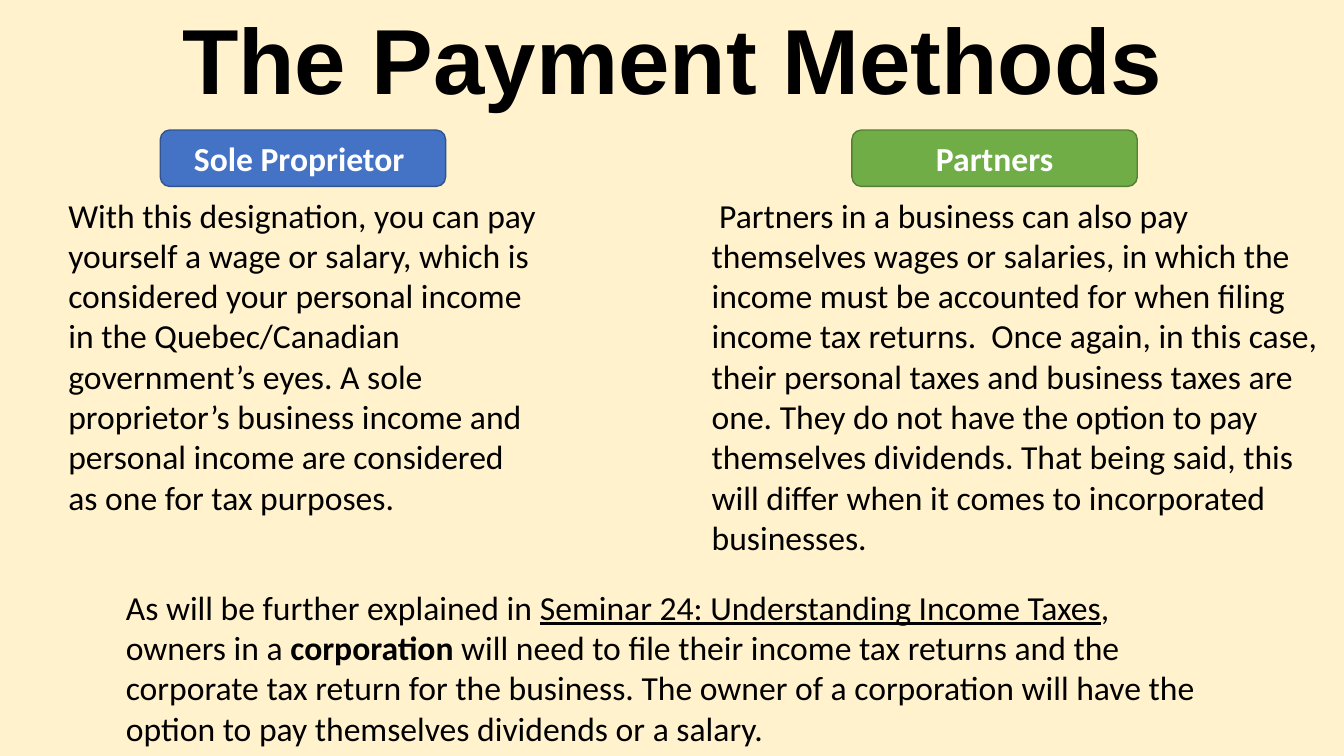
from pptx import Presentation
from pptx.dml.color import RGBColor
from pptx.enum.shapes import MSO_SHAPE
from pptx.enum.text import MSO_ANCHOR, PP_ALIGN
from pptx.util import Inches, Pt

SOLE = (
    "With this designation, you can pay yourself a wage or salary, which is "
    "considered your personal income in the Quebec/Canadian government’s eyes. "
    "A sole proprietor’s business income and personal income are considered as "
    "one for tax purposes."
)
PARTNERS = (
    "Partners in a business can also pay themselves wages or salaries, in which "
    "the income must be accounted for when filing income tax returns.  Once "
    "again, in this case, their personal taxes and business taxes are one. They "
    "do not have the option to pay themselves dividends. That being said, this "
    "will differ when it comes to incorporated businesses."
)
# Each run is its text and its style: "b" bold, "u" underlined
CORP = [
    ("As will be further explained in ", ""),
    ("Seminar 24: Understanding Income Taxes", "u"),
    (", owners in a ", ""),
    ("corporation", "b"),
    (" will need to file their income tax returns and the corporate tax return "
     "for the business. The owner of a corporation will have the option to pay "
     "themselves dividends or a salary.", ""),
]


def paint(color, code):
    color.rgb = RGBColor.from_string(code)


def style(para, size=24, name="Calibri", code="000000", bold=None):
    font = para.font
    font.size, font.name, font.bold = Pt(size), name, bold
    paint(font.color, code)


def add_title(slide, text):
    title = slide.shapes.title
    title.left, title.top = Inches(0.92), Inches(-0.08)
    title.width, title.height = Inches(11.5), Inches(1.45)
    frame = title.text_frame
    frame.text = text
    frame.vertical_anchor = MSO_ANCHOR.MIDDLE
    para = frame.paragraphs[0]
    para.alignment, para.line_spacing = PP_ALIGN.CENTER, 0.9
    style(para, 66, "Arial", bold=True)


def add_text(slide, left, top, width, height, runs):
    box = slide.shapes.add_textbox(
        Inches(left), Inches(top), Inches(width), Inches(height))
    box.text_frame.word_wrap = True
    para = box.text_frame.paragraphs[0]
    style(para)
    for text, mark in runs:
        run = para.add_run()
        run.text = text
        if mark == "b":
            run.font.bold = True
        elif mark == "u":
            run.font.underline = True


def add_label(slide, left, text, fill, line):
    label = slide.shapes.add_shape(
        MSO_SHAPE.ROUNDED_RECTANGLE,
        Inches(left), Inches(1.29), Inches(2.83), Inches(0.56))
    label.shadow.inherit = False
    label.fill.solid()
    paint(label.fill.fore_color, fill)
    paint(label.line.color, line)
    label.line.width = Pt(1)
    frame = label.text_frame
    frame.text = text
    frame.vertical_anchor = MSO_ANCHOR.MIDDLE
    para = frame.paragraphs[0]
    para.alignment = PP_ALIGN.CENTER
    style(para, code="FFFFFF", bold=True)


def main():
    deck = Presentation()
    deck.slide_width, deck.slide_height = Inches(13.33), Inches(7.5)
    slide = deck.slides.add_slide(deck.slide_layouts[5])
    back = slide.background.fill
    back.solid()
    paint(back.fore_color, "FFF2CC")

    add_title(slide, "The Payment Methods")

    # Two columns and the closing note
    add_text(slide, 0.58, 1.88, 4.84, 3.74, [(SOLE, "")])
    add_text(slide, 6.96, 1.88, 6.45, 3.74, [(" ", "b"), (PARTNERS, "")])
    add_text(slide, 1.15, 5.77, 10.84, 1.72, CORP)

    # Column labels
    add_label(slide, 1.59, "Sole Proprietor ", "4472C4", "325491")
    add_label(slide, 8.45, "Partners", "70AD47", "538035")

    deck.save("out.pptx")


if __name__ == "__main__":
    main()
